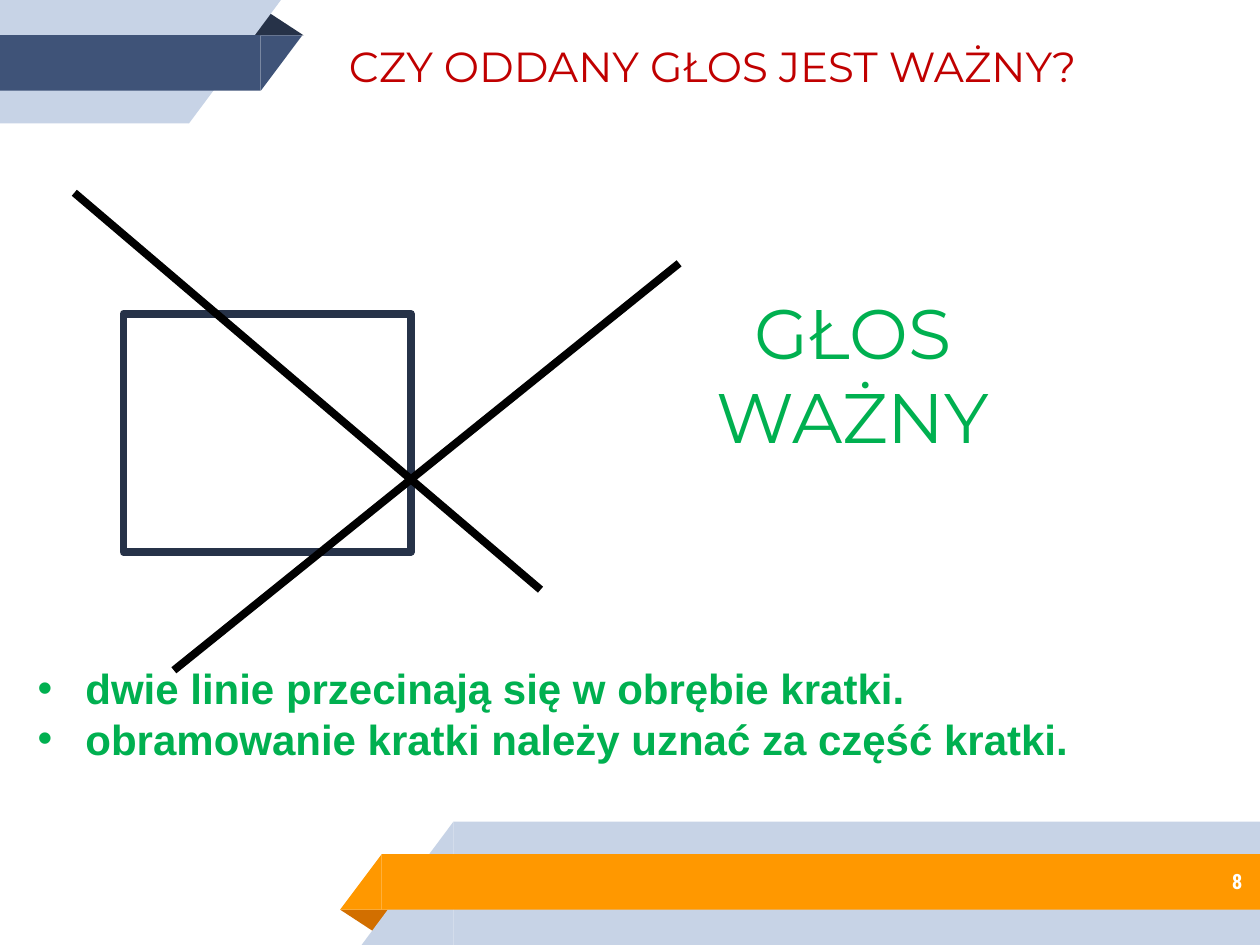
import pptx
import pptx.dml.color
import pptx.enum.shapes
import pptx.enum.text
import pptx.oxml.ns
import pptx.util
from dataclasses import dataclass
from lxml import etree

Inches = pptx.util.Inches
Pt = pptx.util.Pt
Kind = pptx.enum.shapes.MSO_SHAPE
Align = pptx.enum.text.PP_ALIGN
Anchor = pptx.enum.text.MSO_ANCHOR
Fit = pptx.enum.text.MSO_AUTO_SIZE
qn = pptx.oxml.ns.qn


@dataclass(frozen=True)
class Theme:
    pale: str = "C7D3E6"
    blue: str = "3F5378"
    navy: str = "263248"
    orange: str = "FF9800"
    rust: str = "D26F00"
    red: str = "C00000"
    green: str = "00B050"
    black: str = "000000"
    white: str = "FFFFFF"
    head: str = "Montserrat"
    body: str = "Arial"
    small: str = "Roboto Condensed"
    title: int = 24
    verdict: int = 40
    points: int = 24
    number: int = 12
    stroke: float = 4.5


THEME = Theme()


def color(code):
    return pptx.dml.color.RGBColor.from_string(code)


def box(at):
    return [Inches(v) for v in at]


def solid(slide, kind, at, fill, turn=0, flip=False):
    shape = slide.shapes.add_shape(kind, *box(at))
    shape.shadow.inherit = False
    shape.fill.solid()
    shape.fill.fore_color.rgb = color(fill)
    shape.line.fill.background()
    shape.rotation = turn
    if flip:
        shape._element.spPr.find(qn("a:xfrm")).set("flipH", "1")
    return shape


def fold(slide, at, fill, turn=0):
    solid(slide, Kind.ISOSCELES_TRIANGLE, at, fill, turn).adjustments[0] = 0.324


def band(slide, at, slant, fill, top):
    """Bar with a slanted end: on the right at the top, else on the left."""
    left, y, width, height = at
    tip = left + width if top else left - slant
    solid(slide, Kind.RECTANGLE, at, fill)
    solid(slide, Kind.RIGHT_TRIANGLE, (tip, y, slant, height), fill,
          180 if top else 0, flip=True)


def frame(slide, at):
    shape = slide.shapes.add_shape(Kind.RECTANGLE, *box(at))
    shape.shadow.inherit = False
    shape.fill.background()
    shape.line.color.rgb = color(THEME.navy)
    shape.line.width = Pt(THEME.stroke)


def stroke(slide, start, end):
    line = slide.shapes.add_connector(
        pptx.enum.shapes.MSO_CONNECTOR.STRAIGHT, *box(start + end))
    line.line.color.rgb = color(THEME.black)
    line.line.width = Pt(THEME.stroke)
    etree.SubElement(line._element.spPr, qn("a:effectLst"))


def bullet(para):
    props = para._p.get_or_add_pPr()
    props.set("marL", str(Inches(0.38)))
    props.set("indent", str(Inches(-0.38)))
    etree.SubElement(props, qn("a:buFont")).set("typeface", THEME.body)
    etree.SubElement(props, qn("a:buChar")).set("char", "•")


def text(slide, at, lines, font, size, ink, bold=False,
         align=Align.LEFT, dots=False):
    shape = slide.shapes.add_textbox(*box(at))
    body = shape.text_frame
    body.word_wrap = True
    body.auto_size = Fit.SHAPE_TO_FIT_TEXT
    body.text = "\n".join(lines)
    for para in body.paragraphs:
        para.alignment = align
        para.font.name = font
        para.font.size = Pt(size)
        para.font.bold = bold
        para.font.color.rgb = color(ink)
        if dots:
            bullet(para)
    return body


def number(slide, at, value):
    body = text(slide, at, [value], THEME.small, THEME.number, THEME.white,
                True, Align.RIGHT)
    body.auto_size = Fit.NONE
    body.vertical_anchor = Anchor.MIDDLE
    body.margin_left = body.margin_right = Inches(0.1)
    body.margin_top = body.margin_bottom = Inches(0.1)


def main():
    deck = pptx.Presentation()
    deck.slide_width, deck.slide_height = Inches(10), Inches(7.5)
    slide = deck.slides.add_slide(deck.slide_layouts[6])

    # Bottom ribbon
    fold(slide, (2.7, 7.22, 0.43, 0.19), THEME.rust, 180)
    band(slide, (3.6, 6.52, 6.4, 0.98), 0.73, THEME.pale, top=False)
    band(slide, (3.03, 6.78, 6.97, 0.44), 0.33, THEME.orange, top=False)

    # Top ribbon
    fold(slide, (1.98, 0.09, 0.43, 0.19), THEME.navy)
    band(slide, (0, 0, 1.5, 0.98), 0.73, THEME.pale, top=True)
    band(slide, (0, 0.28, 2.07, 0.44), 0.33, THEME.blue, top=True)

    # Ballot square and title
    frame(slide, (0.98, 2.49, 2.28, 1.89))
    text(slide, (2.67, 0.27, 6.77, 0.51), ["CZY ODDANY GŁOS JEST WAŻNY?"],
         THEME.head, THEME.title, THEME.red)

    # Cross over the edge of the square
    stroke(slide, (0.59, 1.53), (4.29, 4.68))
    stroke(slide, (5.39, 2.09), (1.38, 5.32))

    # Verdict and reasons
    text(slide, (4.76, 2.25, 4.02, 1.45), ["GŁOS WAŻNY"],
         THEME.head, THEME.verdict, THEME.green, align=Align.CENTER)
    text(slide, (0.2, 5.21, 9.21, 0.91),
         ["dwie linie przecinają się w obrębie kratki.",
          "obramowanie kratki należy uznać za część kratki."],
         THEME.body, THEME.points, THEME.green, bold=True, dots=True)

    # Slide number
    number(slide, (8.33, 6.76, 1.63, 0.46), "8")

    deck.save("out.pptx")


if __name__ == "__main__":
    main()
